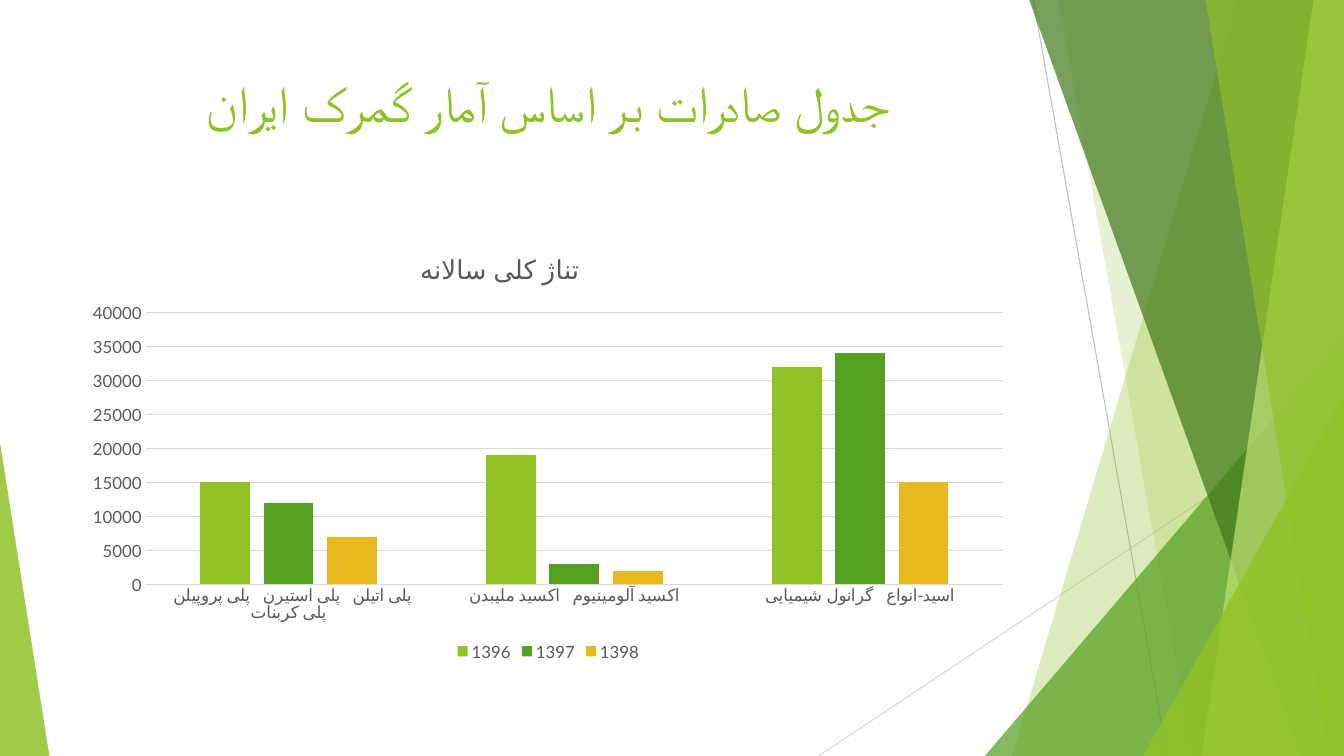
from dataclasses import dataclass

import pptx
import pptx.chart.chart
import pptx.chart.data
import pptx.dml.color
import pptx.enum.chart
import pptx.enum.shapes
import pptx.enum.text
import pptx.oxml
import pptx.oxml.ns
import pptx.slide
import pptx.util

RGB = pptx.dml.color.RGBColor
LIME = RGB(0x90, 0xC2, 0x26)
GREEN = RGB(0x54, 0xA0, 0x21)
FOREST = RGB(0x3F, 0x78, 0x19)
PALE_LIME = RGB(0xC0, 0xE4, 0x74)
GOLD = RGB(0xE6, 0xB9, 0x1E)
CHART_TEXT = RGB(0x59, 0x59, 0x59)
LIGHT_GREY = RGB(0xD9, 0xD9, 0xD9)
MID_GREY = RGB(0xBF, 0xBF, 0xBF)
FONT = "Lato"
WIDTH, HEIGHT = pptx.util.Inches(13.33), pptx.util.Inches(7.5)
HAIRLINE = pptx.util.Pt(0.75)

# All positions are percentages of the slide's width and height.
CONTENT_LEFT, CONTENT_WIDTH = 5.55, 70.5

CATEGORIES = (
    "پلی اتیلن   پلی استیرن   پلی پروپیلن   پلی کربنات",
    "اکسید آلومینیوم   اکسید ملیبدن",
    "اسید-انواع   گرانول شیمیایی",
)


@dataclass(frozen=True)
class Ray:
    start: tuple[float, float]
    end: tuple[float, float]
    color: RGB


@dataclass(frozen=True)
class Panel:
    """Full-height band from a slanted left side to the slide's right edge."""
    top_x: float
    bottom_x: float
    color: RGB
    opacity: int


@dataclass(frozen=True)
class Corner:
    """Right triangle standing on the slide's bottom edge."""
    left: float
    top: float
    width: float
    apex: float
    color: RGB
    opacity: int


@dataclass(frozen=True)
class YearExports:
    year: str
    tonnes: tuple[int, int, int]
    color: RGB


DECORATION = (
    Ray((76.88, 0), (86.85, 100), MID_GREY),
    Ray((100, 53.73), (60.9, 100), LIGHT_GREY),
    Panel(92.1, 75.3, LIME, 30),
    Panel(78.75, 88.73, LIME, 20),
    Corner(73.28, 44.4, 26.72, 1, GREEN, 72),
    Panel(76.58, 96.83, FOREST, 70),
    Panel(97.73, 89.4, PALE_LIME, 70),
    Panel(89.7, 98.85, LIME, 65),
    Corner(85.05, 52.4, 14.95, 1, LIME, 80),
    Corner(0, 58.53, 3.68, 0, LIME, 85),
)
EXPORTS = (
    YearExports("1396", (15000, 19000, 32000), LIME),
    YearExports("1397", (12000, 3000, 34000), GREEN),
    YearExports("1398", (7000, 2000, 15000), GOLD),
)


def across(percent: float) -> int:
    return round(WIDTH * percent / 100)


def down(percent: float) -> int:
    return round(HEIGHT * percent / 100)


def paint(shape, color: RGB, opacity: int) -> None:
    shape.shadow.inherit = False
    shape.fill.solid()
    shape.fill.fore_color.rgb = color
    shape.line.fill.background()
    qn = pptx.oxml.ns.qn
    tint = shape.element.spPr.find(qn("a:solidFill")).find(qn("a:srgbClr"))
    tint.append(tint.makeelement(qn("a:alpha"), {"val": str(opacity * 1000)}))


def draw_ray(slide: pptx.slide.Slide, ray: Ray) -> None:
    connector = slide.shapes.add_connector(
        pptx.enum.shapes.MSO_CONNECTOR.STRAIGHT,
        across(ray.start[0]), down(ray.start[1]), across(ray.end[0]), down(ray.end[1]))
    connector.line.color.rgb = ray.color
    connector.line.width = HAIRLINE
    properties = connector.element.spPr
    properties.append(properties.makeelement(pptx.oxml.ns.qn("a:effectLst"), {}))


def draw_panel(slide: pptx.slide.Slide, panel: Panel) -> None:
    outline = slide.shapes.build_freeform(across(panel.top_x), 0)
    outline.add_line_segments(
        [(WIDTH, 0), (WIDTH, HEIGHT), (across(panel.bottom_x), HEIGHT)], close=True)
    paint(outline.convert_to_shape(), panel.color, panel.opacity)


def draw_corner(slide: pptx.slide.Slide, corner: Corner) -> None:
    triangle = slide.shapes.add_shape(
        pptx.enum.shapes.MSO_SHAPE.ISOSCELES_TRIANGLE, across(corner.left),
        down(corner.top), across(corner.width), down(100 - corner.top))
    triangle.adjustments[0] = corner.apex
    paint(triangle, corner.color, corner.opacity)


def write_title(slide: pptx.slide.Slide) -> None:
    title = slide.shapes.title
    title.left, title.top = across(CONTENT_LEFT), down(8.93)
    title.width, title.height = across(CONTENT_WIDTH), down(19.2)
    frame = title.text_frame
    frame.text = "جدول صادرات بر اساس آمار گمرک ایران"
    frame.auto_size = pptx.enum.text.MSO_AUTO_SIZE.NONE
    frame.vertical_anchor = pptx.enum.text.MSO_ANCHOR.TOP
    heading = frame.paragraphs[0]
    heading.alignment = pptx.enum.text.PP_ALIGN.CENTER
    heading.font.name, heading.font.size = FONT, pptx.util.Pt(36)
    heading.font.color.rgb = LIME
    direction = heading._p.get_or_add_pPr()
    direction.set("rtl", "1")
    lettering = direction.find(pptx.oxml.ns.qn("a:defRPr"))
    lettering.append(lettering.makeelement(pptx.oxml.ns.qn("a:cs"), {"typeface": FONT}))


def place_part(part, position: int, **shares: float) -> None:
    """Fix a chart part's place, in shares of the chart's own size."""
    current = part.find(pptx.oxml.ns.qn("c:layout"))
    if current is not None:
        part.remove(current)
    target = '<c:layoutTarget val="inner"/>' if "w" in shares else ""
    modes = '<c:xMode val="edge"/><c:yMode val="edge"/>'
    values = "".join(f'<c:{key} val="{share}"/>' for key, share in shares.items())
    part.insert(position, pptx.oxml.parse_xml(
        f'<c:layout {pptx.oxml.ns.nsdecls("c")}><c:manualLayout>'
        f"{target}{modes}{values}</c:manualLayout></c:layout>"))


def style_axes(chart: pptx.chart.chart.Chart) -> None:
    for axis in (chart.category_axis, chart.value_axis):
        axis.major_tick_mark = pptx.enum.chart.XL_TICK_MARK.NONE
        axis.minor_tick_mark = pptx.enum.chart.XL_TICK_MARK.NONE
    values = chart.value_axis
    values.minimum_scale, values.maximum_scale, values.major_unit = 0, 40000, 5000
    values.format.line.fill.background()
    for line in (chart.category_axis.format.line, values.major_gridlines.format.line):
        line.color.rgb = LIGHT_GREY
        line.width = HAIRLINE


def draw_exports_chart(slide: pptx.slide.Slide) -> None:
    data = pptx.chart.data.CategoryChartData()
    data.categories = CATEGORIES
    for exports in EXPORTS:
        data.add_series(exports.year, exports.tonnes)
    chart = slide.shapes.add_chart(
        pptx.enum.chart.XL_CHART_TYPE.COLUMN_CLUSTERED, across(CONTENT_LEFT),
        down(31.47), across(CONTENT_WIDTH), down(56.53), data).chart
    chart.font.name, chart.font.size = FONT, pptx.util.Pt(12)
    chart.font.color.rgb = CHART_TEXT

    caption = chart.chart_title.text_frame
    caption.text = "تناژ کلی سالانه"
    caption_font = caption.paragraphs[0].font
    caption_font.name, caption_font.size = FONT, pptx.util.Pt(18.6)
    caption_font.bold = False
    caption_font.color.rgb = CHART_TEXT
    place_part(chart.chart_title.element, 1, x=0.36, y=0.03)
    plot_area = chart.element.find(".//" + pptx.oxml.ns.qn("c:plotArea"))
    place_part(plot_area, 0, x=0.075, y=0.175, w=0.905, h=0.636)

    chart.has_legend = True
    chart.legend.position = pptx.enum.chart.XL_LEGEND_POSITION.BOTTOM
    chart.legend.include_in_layout = False
    style_axes(chart)
    columns = chart.plots[0]
    columns.gap_width, columns.overlap = 219, -27
    columns.vary_by_categories = False
    for series, exports in zip(columns.series, EXPORTS):
        series.format.fill.solid()
        series.format.fill.fore_color.rgb = exports.color


def main() -> None:
    deck = pptx.Presentation()
    deck.slide_width, deck.slide_height = WIDTH, HEIGHT
    slide = deck.slides.add_slide(deck.slide_layouts.get_by_name("Title Only"))
    draw = {Ray: draw_ray, Panel: draw_panel, Corner: draw_corner}
    for part in DECORATION:
        draw[type(part)](slide, part)
    write_title(slide)
    draw_exports_chart(slide)
    deck.save("out.pptx")


if __name__ == "__main__":
    main()
